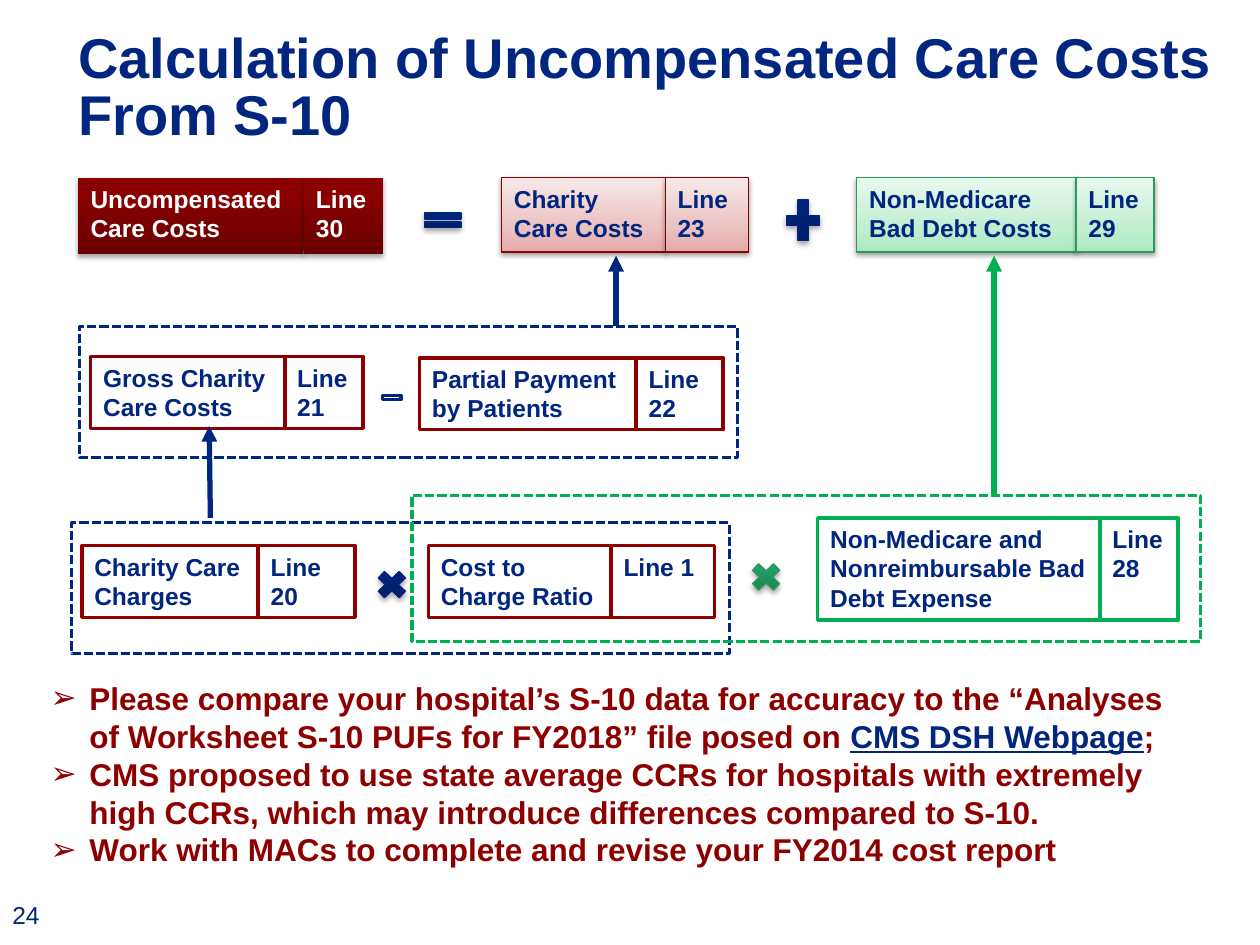
from copy import deepcopy
from dataclasses import dataclass

from lxml import etree
from pptx import Presentation
from pptx.dml.color import RGBColor
from pptx.enum.dml import MSO_LINE
from pptx.enum.shapes import MSO_CONNECTOR, MSO_SHAPE
from pptx.enum.text import MSO_ANCHOR, MSO_AUTO_SIZE, PP_ALIGN
from pptx.oxml.ns import qn
from pptx.util import Inches, Pt

RECTANGLE = MSO_SHAPE.RECTANGLE
TIMES, PLUS = MSO_SHAPE.MATH_MULTIPLY, MSO_SHAPE.MATH_PLUS
EQUAL, MINUS = MSO_SHAPE.MATH_EQUAL, MSO_SHAPE.MATH_MINUS
STRAIGHT = MSO_CONNECTOR.STRAIGHT
SYSTEM_DASH = MSO_LINE.SQUARE_DOT
TOP, MIDDLE, BOTTOM = MSO_ANCHOR.TOP, MSO_ANCHOR.MIDDLE, MSO_ANCHOR.BOTTOM
LEFT = PP_ALIGN.LEFT
NO_AUTOFIT = MSO_AUTO_SIZE.NONE


@dataclass(frozen=True)
class Theme:
    font: str = "Arial"
    navy: str = "01267F"
    red: str = "8E0000"
    green: str = "00B050"
    white: str = "FFFFFF"
    title_size: int = 32
    body_size: int = 18
    label_size: int = 14


@dataclass(frozen=True)
class Style:
    """Fill (one colour or gradient stops), outline, text colour and shadow opacity."""
    fill: object
    line: str = None
    width: float = 0.75
    text: str = Theme.navy
    shadow: int = 0


THEME = Theme()
RED_OUTLINE = Style(THEME.white, THEME.red, 2)
GREEN_OUTLINE = Style(THEME.white, THEME.green, 2)
DARK_RED = Style([(0, "6A0000"), (0.8, "8A0000"), (1, "8A0000")], text=THEME.white, shadow=35)
PALE_RED = Style([(0, "E5A9A9"), (0.35, "EBC3C3"), (1, "F8E8E8")], "8B0000", shadow=38)
PALE_GREEN = Style([(0, "AAE9C0"), (0.35, "C4EED3"), (1, "E8F9EE")], "2F9764", shadow=38)
NAVY_SIGN = Style([(0, "001C60"), (0.8, "00247C"), (1, "00257D")], "00257D", shadow=35)
GREEN_SIGN = Style([(0, "1B7D4C"), (0.8, "23A263"), (1, "20A563")], "2F9764", shadow=35)
HOLLOW_SIGN = Style(None, THEME.navy, 1.75)


def color(value):
    return RGBColor.from_string(value)


def format_font(font, size, value, bold=True):
    font.name, font.size, font.bold = THEME.font, Pt(size), bold
    font.color.rgb = color(value)


def place(shape, left, top, width, height):
    shape.left, shape.top = Inches(left), Inches(top)
    shape.width, shape.height = Inches(width), Inches(height)


def fill_gradient(shape, stops):
    shape.fill.gradient()
    shape.fill.gradient_angle = 90
    stop_list = shape._element.spPr.find(".//" + qn("a:gsLst"))
    stop_list.append(deepcopy(stop_list[0]))
    for stop, (position, value) in zip(shape.fill.gradient_stops, stops):
        stop.position, stop.color.rgb = position, color(value)


def add_shadow(shape, opacity):
    effects = shape._element.spPr.find(qn("a:effectLst"))
    shadow = etree.SubElement(effects, qn("a:outerShdw"), blurRad=str(Pt(3.1)),
                              dist=str(Pt(1.7)), dir="5400000", rotWithShape="0")
    black = etree.SubElement(shadow, qn("a:srgbClr"), val="000000")
    etree.SubElement(black, qn("a:alpha"), val=str(opacity * 1000))


def add_styled_shape(shapes, kind, style, left, top, width, height):
    shape = shapes.add_shape(kind, Inches(left), Inches(top), Inches(width), Inches(height))
    if style.fill is None:
        shape.fill.background()
    elif isinstance(style.fill, str):
        shape.fill.solid()
        shape.fill.fore_color.rgb = color(style.fill)
    else:
        fill_gradient(shape, style.fill)
    if style.line:
        shape.line.color.rgb = color(style.line)
        shape.line.width = Pt(style.width)
    else:
        shape.line.fill.background()
    shape.shadow.inherit = False
    if style.shadow:
        add_shadow(shape, style.shadow)
    return shape


def add_cost_item(slide, style, left, top, widths, height, name, line):
    """A cost name with its worksheet line number beside it, grouped."""
    group = slide.shapes.add_group_shape()
    for offset, width, text in ((0, widths[0], name), (widths[0], widths[1], line)):
        cell = add_styled_shape(group.shapes, RECTANGLE, style, left + offset, top, width, height)
        frame = cell.text_frame
        frame.word_wrap, frame.vertical_anchor = True, TOP
        frame.text = text
        frame.paragraphs[0].alignment = LEFT
        format_font(frame.paragraphs[0].font, THEME.label_size, style.text)


def add_dashed_frame(slide, value, left, top, width, height):
    frame = add_styled_shape(slide.shapes, RECTANGLE, Style(None, value, 1.75),
                             left, top, width, height)
    frame.line.dash_style = SYSTEM_DASH


def add_arrow(slide, value, start, end):
    arrow = slide.shapes.add_connector(STRAIGHT, *(Inches(n) for n in (*start, *end)))
    arrow.line.color.rgb = color(value)
    arrow.line.width = Pt(3)
    etree.SubElement(arrow.line._get_or_add_ln(), qn("a:tailEnd"), type="triangle")
    etree.SubElement(arrow._element.spPr, qn("a:effectLst"))


def add_title(slide, left, top, width, height):
    title = slide.shapes.title
    place(title, left, top, width, height)
    frame = title.text_frame
    frame.text = "Calculation of Uncompensated Care Costs From S-10"
    frame.auto_size, frame.word_wrap, frame.vertical_anchor = NO_AUTOFIT, True, BOTTOM
    frame.margin_left = frame.margin_right = frame.margin_top = frame.margin_bottom = 0
    paragraph = frame.paragraphs[0]
    paragraph.alignment, paragraph.line_spacing = LEFT, 0.85
    format_font(paragraph.runs[0].font, THEME.title_size, THEME.navy)


def add_total_row(slide, left, top):
    shapes = slide.shapes
    add_cost_item(slide, DARK_RED, left, top, (1.79, 0.63), 0.61,
                  "Uncompensated Care Costs", "Line 30")
    add_styled_shape(shapes, EQUAL, NAVY_SIGN, left + 2.7, top + 0.24, 0.39, 0.2)
    add_cost_item(slide, PALE_RED, left + 3.36, top, (1.3, 0.66), 0.59,
                  "Charity Care Costs", "Line 23")
    add_styled_shape(shapes, PLUS, NAVY_SIGN, left + 5.58, top + 0.12, 0.35, 0.44)
    add_cost_item(slide, PALE_GREEN, left + 6.18, top, (1.74, 0.62), 0.59,
                  "Non-Medicare Bad Debt Costs", "Line 29")


def add_charity_row(slide, left, top):
    add_cost_item(slide, RED_OUTLINE, left + 0.09, top + 0.24, (1.54, 0.62), 0.57,
                  "Gross Charity Care Costs", "Line 21")
    add_styled_shape(slide.shapes, MINUS, HOLLOW_SIGN, left + 2.38, top + 0.49, 0.2, 0.15)
    add_cost_item(slide, RED_OUTLINE, left + 2.7, top + 0.25, (1.72, 0.69), 0.57,
                  "Partial Payment by Patients", "Line 22")
    add_dashed_frame(slide, THEME.navy, left, top, 5.22, 1.04)


def add_source_row(slide, left, top):
    """Charges and bad debt, both multiplied by the shared cost to charge ratio."""
    shapes = slide.shapes
    add_cost_item(slide, RED_OUTLINE, left + 0.08, top + 0.4, (1.4, 0.77), 0.57,
                  "Charity Care Charges", "Line 20")
    add_styled_shape(shapes, TIMES, NAVY_SIGN, left + 2.38, top + 0.56, 0.32, 0.3)
    add_cost_item(slide, RED_OUTLINE, left + 2.83, top + 0.4, (1.45, 0.82), 0.57,
                  "Cost to Charge Ratio", "Line 1")
    add_styled_shape(shapes, TIMES, GREEN_SIGN, left + 5.35, top + 0.5, 0.32, 0.3)
    add_cost_item(slide, GREEN_OUTLINE, left + 5.92, top + 0.18, (2.24, 0.62), 0.81,
                  "Non-Medicare and Nonreimbursable Bad Debt Expense", "Line 28")
    add_dashed_frame(slide, THEME.navy, left, top + 0.22, 5.22, 1.04)
    add_dashed_frame(slide, THEME.green, left + 2.7, top, 6.26, 1.16)


def add_notes_list(slide, left, top, width, height):
    body = slide.placeholders[1]
    place(body, left, top, width, height)
    items = (
        ("Please compare your hospital’s S-10 data for accuracy to the “Analyses of "
         "Worksheet S-10 PUFs for FY2018” file posed on ", "CMS DSH Webpage", ";"),
        ("CMS proposed to use state average CCRs for hospitals with extremely high CCRs, "
         "which may introduce differences compared to S-10.",),
        ("Work with MACs to complete and revise your FY2014 cost report",),
    )
    frame = body.text_frame
    frame.auto_size, frame.word_wrap = NO_AUTOFIT, True
    for index, parts in enumerate(items):
        paragraph = frame.add_paragraph() if index else frame.paragraphs[0]
        properties = paragraph._p.get_or_add_pPr()
        properties.set("marL", str(Inches(0.31)))
        properties.set("indent", str(-Inches(0.31)))
        etree.SubElement(properties, qn("a:buChar"), char="➢")
        paragraph.space_before = Pt(0)
        for position, text in enumerate(parts):
            run = paragraph.add_run()
            run.text = text
            is_reference = position == 1
            format_font(run.font, THEME.body_size, THEME.navy if is_reference else THEME.red)
            if is_reference:
                run.font.underline = True


def add_page_number(slide, left, top, width, height):
    box = slide.shapes.add_textbox(Inches(left), Inches(top), Inches(width), Inches(height))
    frame = box.text_frame
    frame.word_wrap, frame.vertical_anchor = True, MIDDLE
    frame.text = "24"
    format_font(frame.paragraphs[0].runs[0].font, THEME.label_size, THEME.navy, bold=False)


def main():
    presentation = Presentation()
    presentation.slide_width, presentation.slide_height = Inches(10), Inches(7.5)
    slide = presentation.slides.add_slide(presentation.slide_layouts[1])
    add_title(slide, 0.62, 0.33, 9.17, 0.84)
    add_total_row(slide, 0.62, 1.41)
    add_charity_row(slide, 0.63, 2.59)
    add_source_row(slide, 0.57, 3.93)
    add_arrow(slide, THEME.navy, (4.89, 2.59), (4.89, 2.03))
    add_arrow(slide, THEME.navy, (1.67, 4.11), (1.66, 3.38))
    add_arrow(slide, THEME.green, (7.89, 3.93), (7.89, 2.03))
    add_notes_list(slide, 0.3, 5.34, 9.33, 1.62)
    add_page_number(slide, 0, 7.06, 2.33, 0.4)
    presentation.save("out.pptx")


if __name__ == "__main__":
    main()
